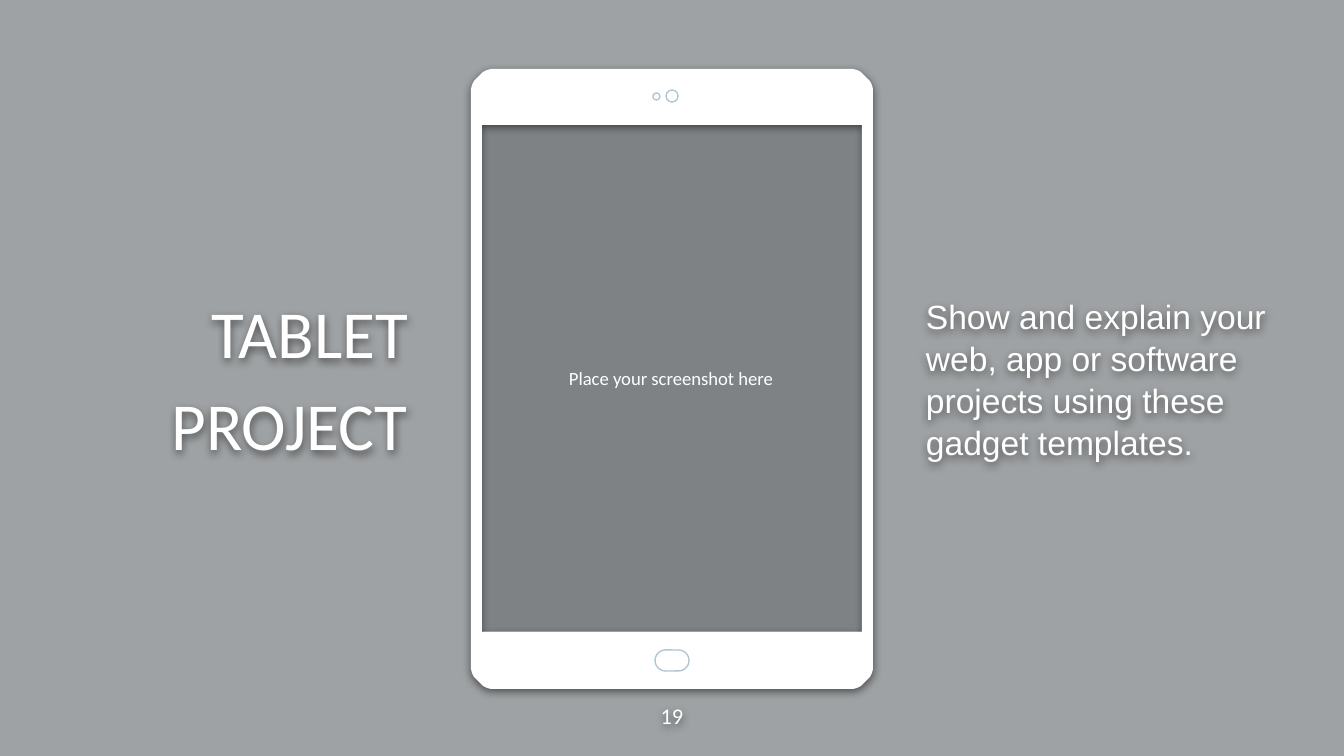
import math
from lxml import etree
from pptx import Presentation
from pptx import util as u
from pptx.dml.color import RGBColor
from pptx.enum import shapes as s, text as t
from pptx.oxml import ns

PX = 914400 / 134.4
WHITE, DARK, EDGE = "FFFFFF", "040E11", "B0C6D3"
SHADE = (
    f'<a:effectLst {ns.nsdecls("a")}><a:outerShdw blurRad="57150" dist="19050" '
    'dir="5400000" algn="bl" rotWithShape="0"><a:srgbClr val="000000">'
    '<a:alpha val="50000"/></a:srgbClr></a:outerShdw></a:effectLst>'
)


def paint(shape, fill, line=None, alpha=None):
    shape.shadow.inherit = False
    shape.fill.solid()
    shape.fill.fore_color.rgb = RGBColor.from_string(fill)
    if alpha:
        tint = shape.fill._xPr.find(".//" + ns.qn("a:srgbClr"))
        etree.SubElement(tint, ns.qn("a:alpha")).set("val", str(alpha * 1000))
    if line:
        shape.line.color.rgb = RGBColor.from_string(line)
        shape.line.width = u.Pt(0.75)
    else:
        shape.line.fill.background()


def write(shape, lines, size, font, align, inset=0, before=0, lead=None):
    frame = shape.text_frame
    look = {"word_wrap": True, "vertical_anchor": t.MSO_ANCHOR.MIDDLE}
    for side in ("left", "top", "right", "bottom"):
        look["margin_" + side] = u.Inches(inset)
    for key, val in look.items():
        setattr(frame, key, val)
    frame.text = "\n".join(lines)
    form = {"alignment": align, "space_before": u.Pt(before), "line_spacing": lead}
    for para in frame.paragraphs:
        for key, val in form.items():
            setattr(para, key, val)
        for key, val in {"size": u.Pt(size), "name": font}.items():
            setattr(para.runs[0].font, key, val)
        para.runs[0].font.color.rgb = RGBColor.from_string(WHITE)


deck = Presentation()
deck.slide_width, deck.slide_height = int(1344 * PX), int(756 * PX)
slide = deck.slides.add_slide(deck.slide_layouts[6])
kinds, align = s.MSO_SHAPE, t.PP_ALIGN

for box in [(0, -1, 1344, 758), (0, -1, 1344, 758), (480, 125, 382, 506)]:
    pane = slide.shapes.add_shape(kinds.RECTANGLE, *[int(n * PX) for n in box])
    paint(pane, DARK, alpha=21)
write(pane, ["Place your screenshot here"], 10, "Calibri", align.CENTER, inset=0.1)

left, top, right, low, rad = 471, 69, 873, 689, 24
rim = []
for turn, x, y in [
    (180, left + rad, top + rad),
    (270, right - rad, top + rad),
    (0, right - rad, low - rad),
    (90, left + rad, low - rad),
]:
    for step in range(0, 91, 10):
        ang = math.radians(turn + step)
        rim.append((x + rad * math.cos(ang), y + rad * math.sin(ang)))

tablet = slide.shapes.add_group_shape().shapes
pen = tablet.build_freeform(862, 125, scale=PX)
pen.add_line_segments([(862, 632), (482, 632), (482, 125)])
pen.move_to(*rim[0])
pen.add_line_segments(rim[1:])
case = pen.convert_to_shape()
paint(case, WHITE)
case.shadow.inherit = True
case._element.spPr.append(etree.fromstring(SHADE))

for kind, box in [
    (kinds.ROUNDED_RECTANGLE, (655, 650, 34, 21)),
    (kinds.OVAL, (653, 93, 7, 7)),
    (kinds.OVAL, (666, 90, 12, 12)),
]:
    part = tablet.add_shape(kind, *[int(n * PX) for n in box])
    paint(part, WHITE, EDGE)
    if kind == kinds.ROUNDED_RECTANGLE:
        part.adjustments[0] = 0.5

pitch = "Show and explain your web, app or software projects using these gadget templates."
for box, lines, size, font, side, before, lead in [
    ((632, 675, 80, 81), ["19"], 12, "Calibri", align.CENTER, 0, None),
    ((56, 260, 352, 236), ["TABLET", "PROJECT"], 36, "Calibri", align.RIGHT, 6, None),
    ((926, 260, 352, 236), [pitch], 18, "Arial", align.LEFT, 6, 1.04),
]:
    label = slide.shapes.add_textbox(*[int(n * PX) for n in box])
    write(label, lines, size, font, side, before=before, lead=lead)
    label._element.spPr.append(etree.fromstring(SHADE))

deck.save("out.pptx")
